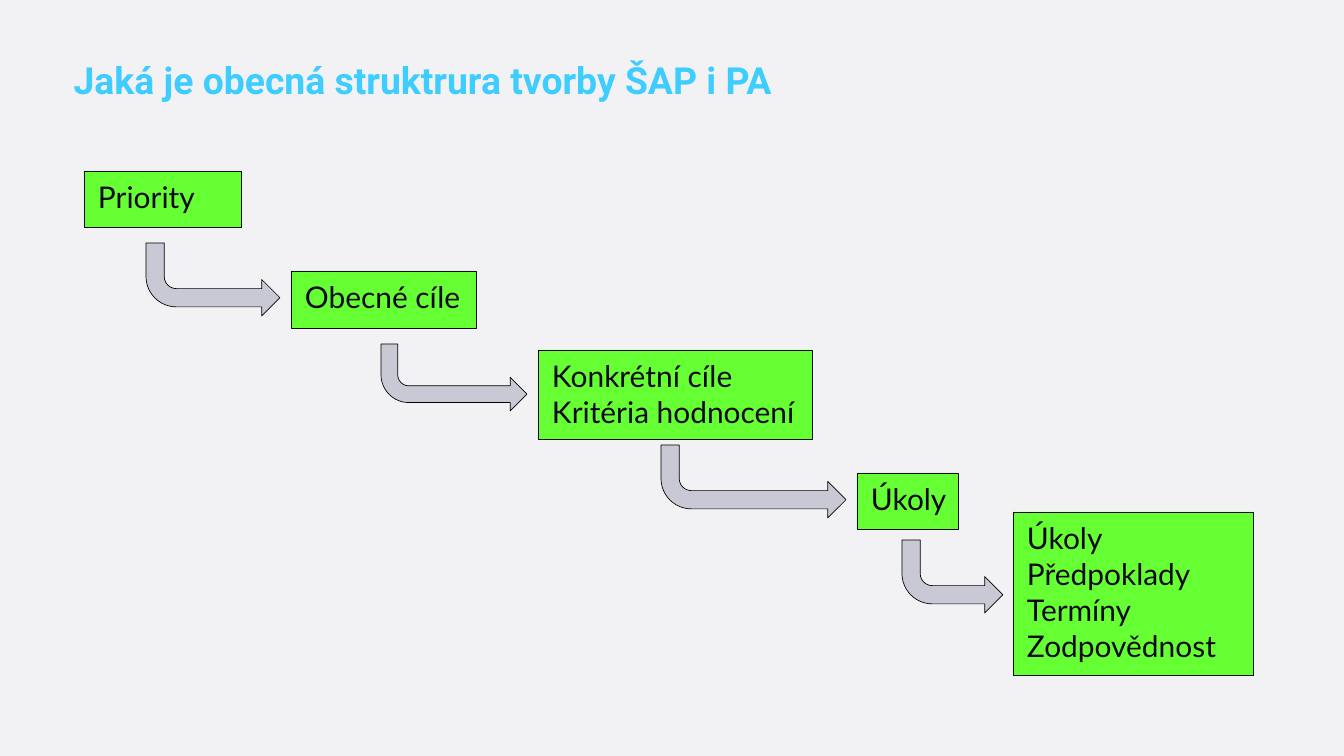
from pptx import Presentation
from pptx.dml.color import RGBColor
from pptx.enum.shapes import MSO_SHAPE
from pptx.enum.text import MSO_ANCHOR, PP_ALIGN
from pptx.util import Emu, Pt

RECTANGLE, BENT_ARROW = MSO_SHAPE.RECTANGLE, MSO_SHAPE.BENT_ARROW
TOP, LEFT = MSO_ANCHOR.TOP, PP_ALIGN.LEFT
EMU_PER_PX = 914400 / 67.2

BACKGROUND, INK, BLACK = "F2F2F5", "0A091B", "000000"
GREEN, GREY, BLUE = "66FF33", "C9C9D5", "3FCDFF"

TITLE = "Jaká je obecná struktrura tvorby ŠAP i PA"
TITLE_AREA = (67, 59, 1213, 48)

# Lines of text, then left, top, width, height in px
STEPS = [
    (["Priority"], (84, 171, 157, 56)),
    (["Obecné cíle"], (291, 271, 185, 57)),
    (["Konkrétní cíle", "Kritéria hodnocení"], (538, 350, 274, 89)),
    (["Úkoly"], (857, 473, 101, 56)),
    (["Úkoly", "Předpoklady", "Termíny", "Zodpovědnost"], (1013, 512, 240, 163)),
]
ARROWS = [
    (146, 243, 134, 73),
    (381, 344, 146, 67),
    (661, 445, 185, 73),
    (902, 540, 101, 73),
]
ARROW_ADJUSTMENTS = (0.25, 0.25, 0.25, 0.416)


def px(length):
    return Emu(round(length * EMU_PER_PX))


def colour(value):
    return RGBColor.from_string(value)


def write(frame, lines, font, size, text_colour, bold=False):
    frame.text = "\n".join(lines)
    frame.vertical_anchor = TOP
    for para in frame.paragraphs:
        para.alignment = LEFT
        for span in para.runs:
            span.font.name = font
            span.font.size = Pt(size)
            span.font.bold = bold
            span.font.color.rgb = colour(text_colour)


def add_outlined(page, kind, area, fill, line):
    shape = page.shapes.add_shape(kind, *map(px, area))
    shape.shadow.inherit = False
    shape.fill.solid()
    shape.fill.fore_color.rgb = colour(fill)
    shape.line.color.rgb = colour(line)
    shape.line.width = Pt(0.75)
    return shape


def add_title(page):
    box = page.shapes.add_textbox(*map(px, TITLE_AREA))
    box.text_frame.word_wrap = True
    write(box.text_frame, [TITLE], "Roboto", 40, BLUE, bold=True)
    box.text_frame.paragraphs[0].line_spacing = 0.9


def add_step(page, lines, area):
    frame = add_outlined(page, RECTANGLE, area, GREEN, INK).text_frame
    frame.word_wrap = False
    frame.margin_left, frame.margin_right = px(14), 0
    frame.margin_top, frame.margin_bottom = px(8), px(3)
    write(frame, lines, "Lato", 32, INK)


def add_arrow(page, area):
    """Add a bent arrow that runs down and then right."""
    arrow = add_outlined(page, BENT_ARROW, area, GREY, BLACK)
    for index, value in enumerate(ARROW_ADJUSTMENTS):
        arrow.adjustments[index] = value
    arrow._element.spPr.xfrm.set("flipV", "1")


def main():
    deck = Presentation()
    deck.slide_width, deck.slide_height = px(1344), px(756)
    page = deck.slides.add_slide(deck.slide_layouts[6])
    page.background.fill.solid()
    page.background.fill.fore_color.rgb = colour(BACKGROUND)

    add_title(page)
    for lines, area in STEPS:
        add_step(page, lines, area)
    for area in ARROWS:
        add_arrow(page, area)
    deck.save("out.pptx")


if __name__ == "__main__":
    main()
